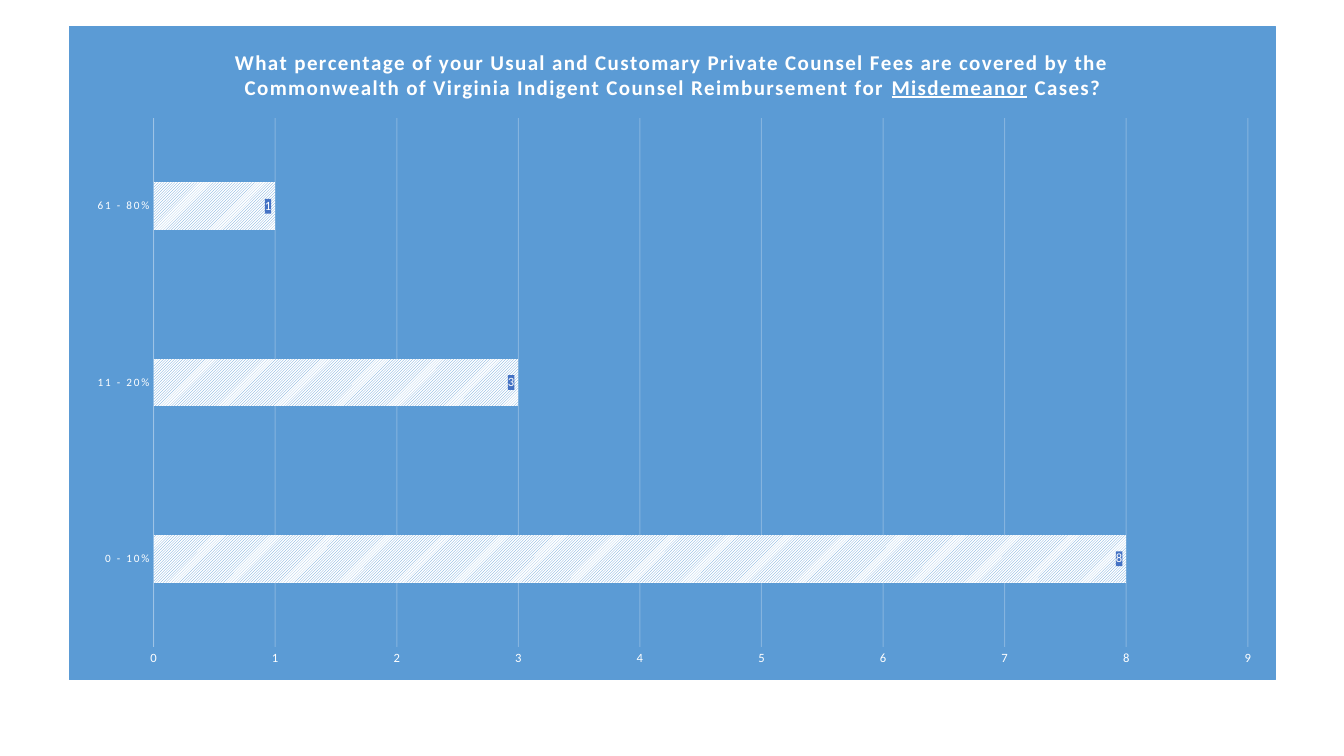
import pptx
import pptx.chart.data
import pptx.dml.color
import pptx.enum.chart
import pptx.enum.dml
import pptx.oxml
import pptx.util
from pptx.oxml.ns import nsdecls

Cm, Pt = pptx.util.Cm, pptx.util.Pt
Enum = pptx.enum.chart
FONT, WHITE, BLUE, PALE, LABEL = "Calibri", "FFFFFF", "5B9BD5", "9DC3E6", "4472C4"


def color(code):
    return pptx.dml.color.RGBColor.from_string(code)


def solid(code):
    return f'<a:solidFill><a:srgbClr val="{code}"/></a:solidFill>'


def parse(tag, body):
    return pptx.oxml.parse_xml(f'<c:{tag} {nsdecls("c", "a")}>{body}</c:{tag}>')


class Deck:
    def __init__(self):
        self.file = pptx.Presentation()
        self.file.slide_width, self.file.slide_height = Cm(33.87), Cm(19.05)
        self.slide = self.file.slides.add_slide(self.file.slide_layouts[6])

    def style(self, font, size, space=0, bold=False):
        font.name, font.size, font.bold = FONT, Pt(size), bold
        font.color.rgb = color(WHITE)
        if space:
            font._element.set("spc", str(space))

    def bars(self, box, cats, vals):
        data = pptx.chart.data.CategoryChartData()
        data.categories = cats
        data.add_series("Series 1", vals)
        frame = self.slide.shapes.add_chart(
            Enum.XL_CHART_TYPE.BAR_CLUSTERED, *map(Cm, box), data)
        chart = frame.chart
        chart.has_legend = False
        self.style(chart.font, 10)

        # Bars with a striped fill
        plot = chart.plots[0]
        plot.gap_width, plot.overlap, plot.vary_by_categories = 269, -20, False
        fill = plot.series[0].format.fill
        fill.patterned()
        fill.pattern = pptx.enum.dml.MSO_PATTERN.LIGHT_UPWARD_DIAGONAL
        fill.fore_color.rgb, fill.back_color.rgb = color(BLUE), color(WHITE)

        # Value labels on small blue boxes
        labels = plot.series[0].data_labels
        labels.show_value = True
        labels.position = Enum.XL_LABEL_POSITION.INSIDE_END
        self.style(labels.font, 9)
        labels._element.find("{*}txPr").addprevious(parse("spPr", solid(LABEL)))
        return chart

    def axes(self, chart):
        cat, val = chart.category_axis, chart.value_axis
        for axis, size, space in ((cat, 8, 120), (val, 9, 0)):
            axis.major_tick_mark = axis.minor_tick_mark = Enum.XL_TICK_MARK.NONE
            self.style(axis.tick_labels.font, size, space)
        cat.has_major_gridlines = False
        cat.format.line.color.rgb = color(PALE)
        cat.format.line.width = Pt(0.25)
        val.minimum_scale, val.maximum_scale, val.major_unit = 0, 9, 1
        val.format.line.fill.background()
        grid = val.major_gridlines.format.line
        grid.color.rgb, grid.width = color(WHITE), Pt(0.75)
        tint = val.major_gridlines._xAx.find("{*}majorGridlines//{*}srgbClr")
        tint.append(pptx.oxml.parse_xml(f'<a:alpha {nsdecls("a")} val="25000"/>'))

    def title(self, chart, parts):
        para = chart.chart_title.text_frame.paragraphs[0]
        for text, line in parts:
            run = para.add_run()
            run.text = text
            self.style(run.font, 15, 100, True)
            run.font.underline = line
        chart.chart_title.include_in_layout = False

    def panel(self, chart, area):
        # Blue ground and a fixed inner plot area
        root = chart._chartSpace
        root.find("{*}chart").addnext(parse(
            "spPr", solid(BLUE) + f'<a:ln w="9525">{solid(BLUE)}</a:ln>'))
        spots = '<c:layoutTarget val="inner"/><c:xMode val="edge"/><c:yMode val="edge"/>'
        spots += "".join(f'<c:{key} val="{num}"/>' for key, num in zip("xywh", area))
        plot = root.find("{*}chart/{*}plotArea")
        old = plot.find("{*}layout")
        if old is not None:
            plot.remove(old)
        plot.insert(0, parse("layout", f"<c:manualLayout>{spots}</c:manualLayout>"))


def main():
    deck = Deck()
    chart = deck.bars((1.73, 0.66, 30.43, 16.48),
                      ("0 - 10%", "11 - 20%", "61 - 80%"), (8, 3, 1))
    deck.axes(chart)
    deck.title(chart, (
        ("What percentage of your Usual and Customary Private Counsel Fees are covered "
         "by the Commonwealth of Virginia Indigent Counsel Reimbursement for\u00a0", False),
        ("Misdemeanor", True), (" Cases?", False)))
    deck.panel(chart, (0.07, 0.14, 0.907, 0.81))
    deck.file.save("out.pptx")


if __name__ == "__main__":
    main()
